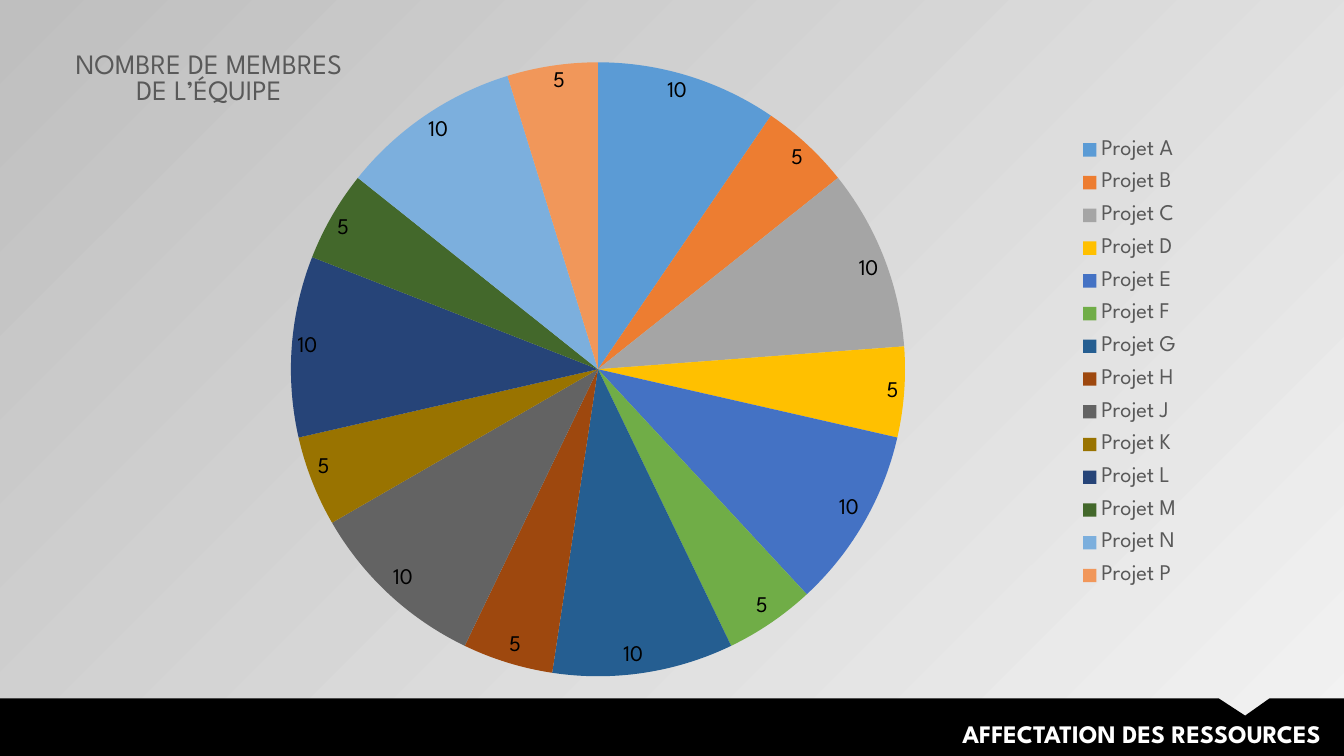
import pptx
import pptx.chart.data
import pptx.dml.color
import pptx.enum.chart
import pptx.enum.text
import pptx.oxml
import pptx.oxml.ns
import pptx.util

Inches = pptx.util.Inches
FACE = "League Spartan"
SLICES = ["5B9BD5", "ED7D31", "A5A5A5", "FFC000", "4472C4", "70AD47", "255E91",
          "9E480E", "636363", "997300", "264478", "43682B", "7CAFDD", "F1975A"]
PROJECTS = [f"Projet {letter}" for letter in "ABCDEFGHJKLMNP"]
MEMBERS = [10, 5] * 7


def rgb(code):
    return pptx.dml.color.RGBColor.from_string(code)


def style(font, size, color, bold=False):
    font.name = FACE
    font.size = pptx.util.Pt(size)
    font.color.rgb = rgb(color)
    font.bold = bold


def shade(slide):
    fill = slide.background.fill
    fill.gradient()
    fill.gradient_angle = 135
    for stop, color in zip(fill.gradient_stops, ["F2F2F2", "BFBFBF"]):
        stop.color.rgb = rgb(color)


def add_bar(slide):
    """Draw the bottom band with a notch in its top edge."""
    points = [(12.09, 6.93), (12.35, 7.1), (12.59, 6.93),
              (13.33, 6.93), (13.33, 7.5), (0, 7.5)]
    build = slide.shapes.build_freeform(0, Inches(6.93))
    build.add_line_segments([(Inches(x), Inches(y)) for x, y in points])
    bar = build.convert_to_shape()
    bar.shadow.inherit = False
    bar.fill.solid()
    bar.fill.fore_color.rgb = rgb("000000")
    bar.line.fill.background()


def add_text(slide, text, left, top, width, height):
    box = slide.shapes.add_textbox(
        Inches(left), Inches(top), Inches(width), Inches(height))
    box.text_frame.word_wrap = True
    line = box.text_frame.paragraphs[0]
    line.text = text
    line.alignment = pptx.enum.text.PP_ALIGN.RIGHT
    style(line.font, 18, "FFFFFF", True)


def place(part, index, inner=False, **spots):
    """Give a chart part a manual layout, in fractions of the chart."""
    for old in part.findall(pptx.oxml.ns.qn("c:layout")):
        part.remove(old)
    target = '<c:layoutTarget val="inner"/>' if inner else ""
    modes = '<c:xMode val="edge"/><c:yMode val="edge"/>'
    sizes = "".join(f'<c:{key} val="{val}"/>' for key, val in spots.items())
    part.insert(index, pptx.oxml.parse_xml(
        f'<c:layout {pptx.oxml.ns.nsdecls("c")}><c:manualLayout>'
        f"{target}{modes}{sizes}</c:manualLayout></c:layout>"))


def add_title(chart, lines):
    chart.has_title = True
    frame = chart.chart_title.text_frame
    frame.text = "\n".join(lines)
    for line in frame.paragraphs:
        line.alignment = pptx.enum.text.PP_ALIGN.CENTER
        style(line.font, 20, "595959")
    place(chart.chart_title._element, 1, x=0, y=0.04)


def add_legend(chart):
    chart.has_legend = True
    legend = chart.legend
    legend.position = pptx.enum.chart.XL_LEGEND_POSITION.RIGHT
    legend.include_in_layout = False
    style(legend.font, 16, "595959")
    place(legend._element, 1, x=0.82, y=0.16, w=0.11, h=0.72)


def add_pie(slide):
    data = pptx.chart.data.CategoryChartData()
    data.categories = PROJECTS
    data.add_series("Series 1", MEMBERS)
    chart = slide.shapes.add_chart(
        pptx.enum.chart.XL_CHART_TYPE.PIE, Inches(0.72), Inches(0.23),
        Inches(11.98), Inches(6.48), data).chart
    style(chart.font, 10, "000000")
    add_title(chart, ["NOMBRE DE MEMBRES", "DE L’ÉQUIPE"])
    add_legend(chart)
    place(chart._chartSpace.chart.plotArea, 0, inner=True,
          x=0.18, y=0.06, w=0.51, h=0.94)
    plot = chart.plots[0]
    plot.vary_by_categories = True
    for index, color in enumerate(SLICES):
        fill = plot.series[0].points[index].format.fill
        fill.solid()
        fill.fore_color.rgb = rgb(color)
    plot.has_data_labels = True
    labels = plot.data_labels
    labels.show_value = True
    labels.show_percentage = False
    labels.position = pptx.enum.chart.XL_LABEL_POSITION.INSIDE_END
    style(labels.font, 16, "000000")


def main():
    deck = pptx.Presentation()
    deck.slide_width = Inches(13.33)
    deck.slide_height = Inches(7.5)
    slide = deck.slides.add_slide(deck.slide_layouts[6])
    shade(slide)
    add_bar(slide)
    add_text(slide, "AFFECTATION DES RESSOURCES", 4.14, 7.08, 9.06, 0.4)
    add_pie(slide)
    deck.save("out.pptx")


if __name__ == "__main__":
    main()
